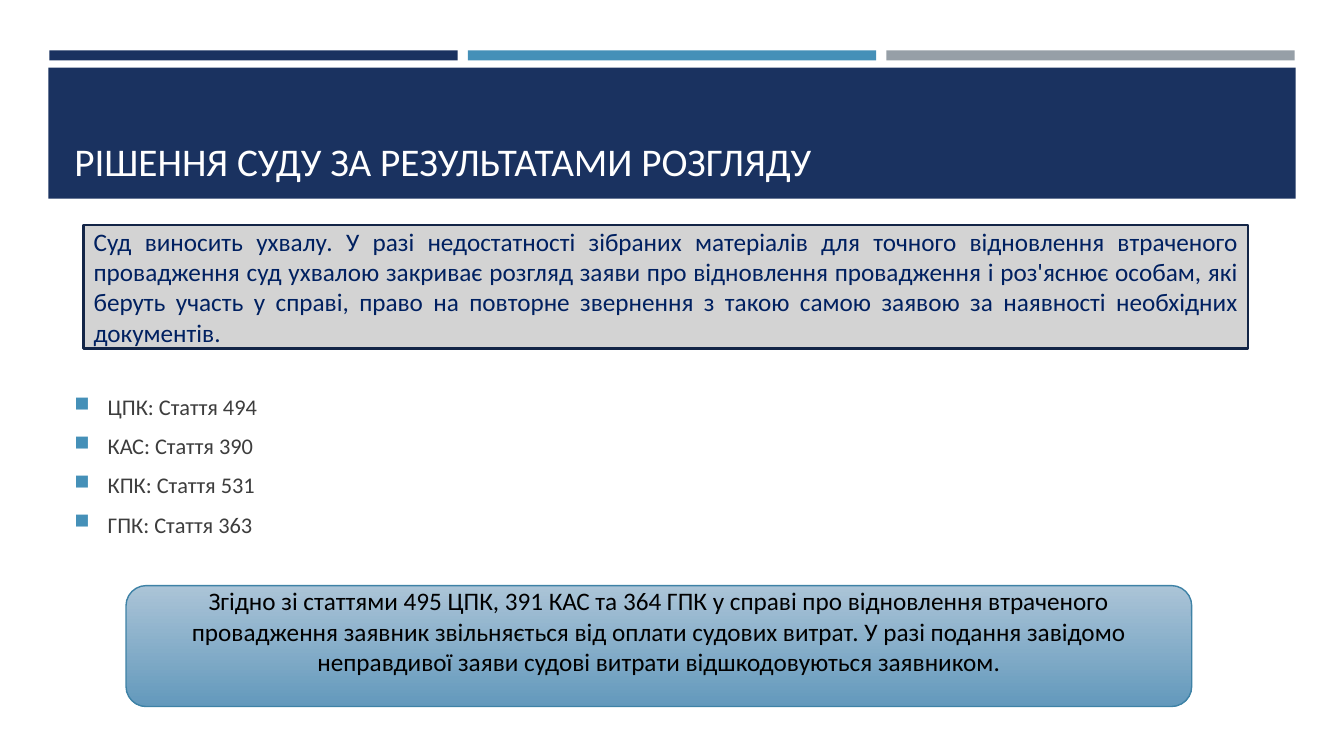
from lxml import etree
from pptx import Presentation
from pptx.dml.color import RGBColor
from pptx.enum import shapes, text
from pptx.oxml.ns import qn
from pptx.util import Inches, Pt

NAVY = RGBColor(0x1A, 0x32, 0x60)
BLUE = RGBColor(0x45, 0x90, 0xB8)
GREY = RGBColor(0x96, 0x9F, 0xA7)
LIGHT_GREY = RGBColor(0xD3, 0xD3, 0xD3)
RULING_LINE = RGBColor(0x13, 0x25, 0x47)
RULING_TEXT = RGBColor(0x00, 0x20, 0x60)
COSTS_TOP = RGBColor(0xAB, 0xC4, 0xD7)
COSTS_BOTTOM = RGBColor(0x63, 0x99, 0xBC)
COSTS_LINE = RGBColor(0x3E, 0x82, 0xA6)
BODY_TEXT = RGBColor(0x3D, 0x3D, 0x3D)
WHITE = RGBColor(0xFF, 0xFF, 0xFF)
BLACK = RGBColor(0x00, 0x00, 0x00)

prs = Presentation()
prs.slide_width, prs.slide_height = Inches(13.33), Inches(7.5)
s = prs.slides.add_slide(prs.slide_layouts[6])


def add_box(left, top, width, height, fill=None, line=None, line_width=1,
            kind=shapes.MSO_SHAPE.RECTANGLE):
    sp = s.shapes.add_shape(kind, Inches(left), Inches(top), Inches(width), Inches(height))
    sp.shadow.inherit = False
    if fill is not None:
        sp.fill.solid()
        sp.fill.fore_color.rgb = fill
    if line is None:
        sp.line.fill.background()
    else:
        sp.line.color.rgb = line
        sp.line.width = Pt(line_width)
    return sp


def write(sp, *lines, size=18, color=BLACK, align=text.PP_ALIGN.LEFT,
          anchor=text.MSO_ANCHOR.MIDDLE):
    """Fill a shape with one paragraph per line and return the paragraphs."""
    tf = sp.text_frame
    tf.word_wrap = True
    tf.vertical_anchor = anchor
    tf.text = "\n".join(lines)
    for p in tf.paragraphs:
        p.alignment = align
        f = p.runs[0].font
        f.name, f.size, f.color.rgb = "Calibri", Pt(size), color
    return tf.paragraphs


# Header
for i, color in enumerate((NAVY, BLUE, GREY)):
    add_box(0.49 + i * 4.15, 0.5, 4.05, 0.1, color)
add_box(0.48, 0.67, 12.37, 1.3, NAVY)
title = s.shapes.add_textbox(Inches(0.64), Inches(0.77), Inches(12.06), Inches(1.11))
write(title, "РІШЕННЯ СУДУ ЗА РЕЗУЛЬТАТАМИ РОЗГЛЯДУ", size=28, color=WHITE,
      anchor=text.MSO_ANCHOR.BOTTOM)

# Articles of the codes
articles = s.shapes.add_textbox(Inches(0.64), Inches(3.85), Inches(12.06), Inches(1.7))
for p in write(articles, "ЦПК: Стаття 494", "КАС: Стаття 390", "КПК: Стаття 531",
               "ГПК: Стаття 363", size=16, color=BODY_TEXT, anchor=text.MSO_ANCHOR.TOP):
    p.space_before, p.space_after = Pt(2.8), Pt(6)
    pPr = p._p.get_or_add_pPr()
    pPr.set("marL", str(Inches(0.33)))
    pPr.set("indent", str(-Inches(0.33)))
    bullet_color = etree.SubElement(pPr, qn("a:buClr"))
    etree.SubElement(bullet_color, qn("a:srgbClr"), val=str(BLUE))
    etree.SubElement(pPr, qn("a:buSzPct"), val="92000")
    etree.SubElement(pPr, qn("a:buChar"), char="■")

# Ruling
ruling = add_box(0.83, 2.23, 11.55, 1.23, LIGHT_GREY, RULING_LINE, 1.75)
write(ruling,
      "Суд виносить ухвалу. У разі недостатності зібраних матеріалів для точного "
      "відновлення втраченого провадження суд ухвалою закриває розгляд заяви про "
      "відновлення провадження і роз'яснює особам, які беруть участь у справі, право "
      "на повторне звернення з такою самою заявою за наявності необхідних документів.",
      color=RULING_TEXT, align=text.PP_ALIGN.JUSTIFY)

# Court costs
costs = add_box(1.25, 5.81, 10.57, 1.2, line=COSTS_LINE,
                kind=shapes.MSO_SHAPE.ROUNDED_RECTANGLE)
costs.fill.gradient()
costs.fill.gradient_angle = 270
for stop, color in zip(costs.fill.gradient_stops, (COSTS_TOP, COSTS_BOTTOM)):
    stop.color.rgb = color
write(costs,
      "Згідно зі статтями 495 ЦПК, 391 КАС та 364 ГПК у справі про відновлення "
      "втраченого провадження заявник звільняється від оплати судових витрат. У разі "
      "подання завідомо неправдивої заяви судові витрати відшкодовуються заявником.",
      align=text.PP_ALIGN.CENTER)
costs.text_frame.margin_top, costs.text_frame.margin_bottom = 0, Inches(0.3)

prs.save("out.pptx")
